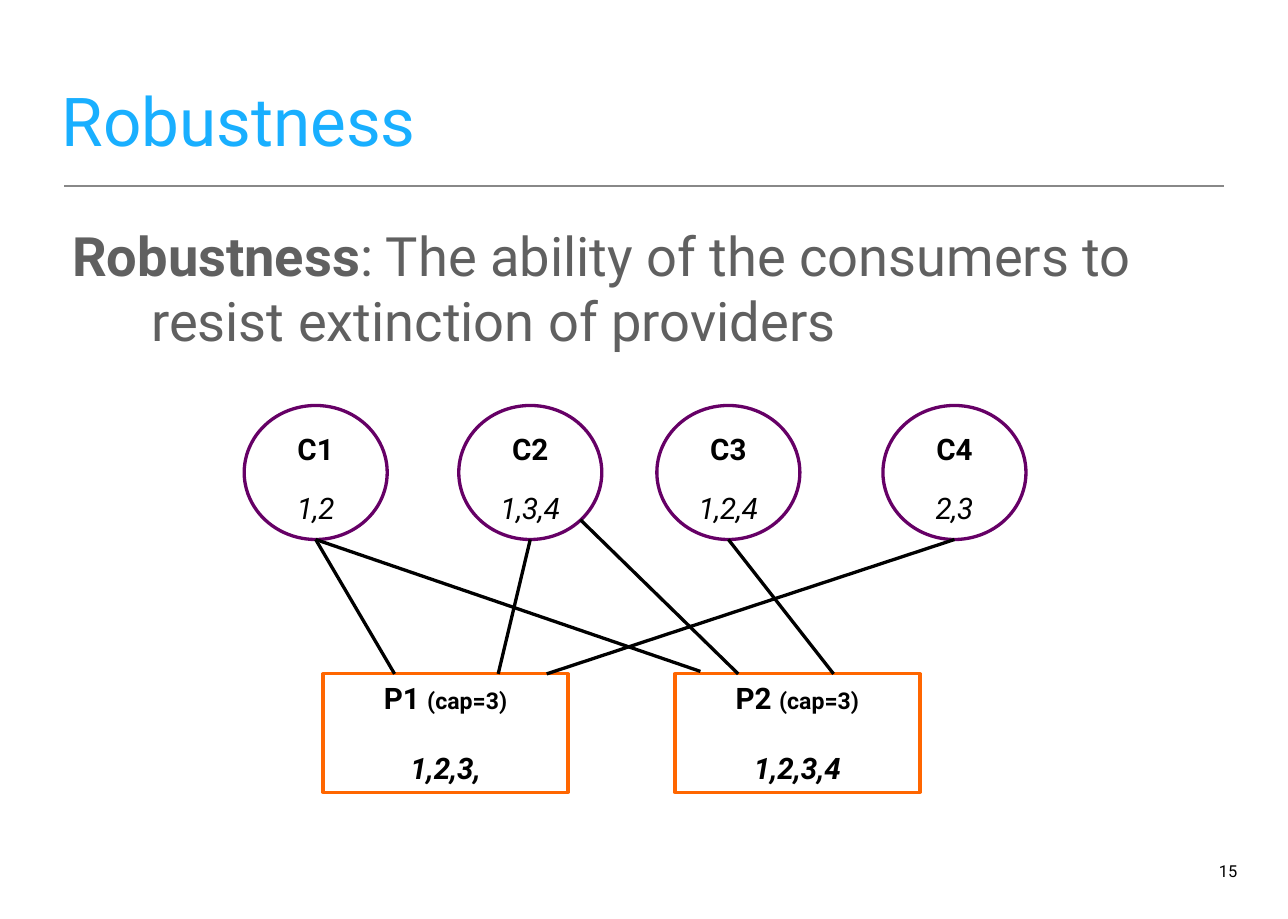
import pptx
import pptx.util
import pptx.dml.color
import pptx.enum.shapes
import pptx.enum.text
import pptx.oxml
import pptx.oxml.ns

Pt = pptx.util.Pt
ALIGN = pptx.enum.text.PP_ALIGN
ANCHOR = pptx.enum.text.MSO_ANCHOR
SHAPE = pptx.enum.shapes.MSO_SHAPE
STRAIGHT = pptx.enum.shapes.MSO_CONNECTOR.STRAIGHT

COLORS = {
    "title": "19AFFF",
    "body": "606060",
    "rule": "888888",
    "ink": "000000",
    "consumer": "660066",
    "provider": "FF6600",
}


def rgb(name):
    return pptx.dml.color.RGBColor.from_string(COLORS[name])


def add_run(paragraph, text, *, size=18, color="ink", bold=False, italic=False):
    run = paragraph.add_run()
    run.text = text
    run.font.name = "Roboto"
    run.font.size = Pt(size)
    run.font.bold = bold
    run.font.italic = italic
    run.font.color.rgb = rgb(color)


class SlideBuilder:
    def __init__(self, slide):
        self.slide = slide

    def text_box(self, box, *, anchor=ANCHOR.TOP, side=5, align=ALIGN.LEFT):
        """Add an empty text box and return its first paragraph."""
        frame = self.slide.shapes.add_textbox(*map(Pt, box)).text_frame
        frame.word_wrap = True
        frame.vertical_anchor = anchor
        frame.margin_left = frame.margin_right = Pt(side)
        frame.margin_top = frame.margin_bottom = Pt(3)
        frame.paragraphs[0].alignment = align
        return frame.paragraphs[0]

    def node(self, kind, box, color, gap):
        """Add an outlined shape and return its label and value paragraphs."""
        shape = self.slide.shapes.add_shape(kind, *map(Pt, box))
        shape.shadow.inherit = False
        shape.fill.background()
        shape.line.color.rgb = rgb(color)
        shape.line.width = Pt(2)
        frame = shape.text_frame
        frame.word_wrap = True
        frame.vertical_anchor = ANCHOR.TOP
        label, values = frame.paragraphs[0], frame.add_paragraph()
        label.alignment = values.alignment = ALIGN.CENTER
        values.space_before = Pt(gap)
        return label, values

    def consumer(self, center, name, values):
        box = (center - CIRCLE_WIDTH / 2, CIRCLE_TOP, CIRCLE_WIDTH, CIRCLE_HEIGHT)
        label, content = self.node(SHAPE.OVAL, box, "consumer", 14)
        add_run(label, name, bold=True)
        add_run(content, values, italic=True)

    def provider(self, left, name, values):
        box = (left, PROVIDER_TOP, 149, 72)
        label, content = self.node(SHAPE.RECTANGLE, box, "provider", 21)
        add_run(label, name + " ", bold=True)
        add_run(label, "(cap=3)", size=14, bold=True)
        add_run(content, values, bold=True, italic=True)

    def line(self, start, end, color="ink", width=2):
        connector = self.slide.shapes.add_connector(STRAIGHT, *map(Pt, start + end))
        connector.line.color.rgb = rgb(color)
        connector.line.width = Pt(width)
        properties = connector._element.spPr
        properties.append(pptx.oxml.parse_xml(
            "<a:effectLst %s/>" % pptx.oxml.ns.nsdecls("a")))


CIRCLE_TOP, CIRCLE_WIDTH, CIRCLE_HEIGHT = 246.5, 87, 81.5
CIRCLE_BOTTOM = CIRCLE_TOP + CIRCLE_HEIGHT
PROVIDER_TOP = 409.7
CONSUMERS = {
    "C1": (192, "1,2"),
    "C2": (322.5, "1,3,4"),
    "C3": (443, "1,2,4"),
    "C4": (580.5, "2,3"),
}
PROVIDERS = {"P1": (196.5, "1,2,3,"), "P2": (410.5, "1,2,3,4")}
# Consumer and the x where its link meets the provider
LINKS = [("C1", 240), ("C2", 303), ("C4", 332.5), ("C3", 507)]


def main():
    presentation = pptx.Presentation()
    presentation.slide_width = Pt(783.36)
    presentation.slide_height = Pt(558.72)
    builder = SlideBuilder(presentation.slides.add_slide(presentation.slide_layouts[6]))

    builder.line((39, 113), (744.5, 113), "rule", 1)
    title = builder.text_box((34.5, 20.5, 714, 80), anchor=ANCHOR.BOTTOM, side=3)
    add_run(title, "Robustness", size=41, color="title")

    definition = builder.text_box((39, 132, 705, 367))
    properties = definition._p.get_or_add_pPr()
    properties.set("marL", str(Pt(48)))
    properties.set("indent", str(Pt(-48)))
    add_run(definition, "Robustness", size=33, color="body", bold=True)
    add_run(definition, ": The ability of the consumers to resist extinction of providers",
            size=33, color="body")

    page = builder.text_box((734.5, 515, 23, 29.5), anchor=ANCHOR.MIDDLE, align=ALIGN.RIGHT)
    add_run(page, "15", size=10)

    for name, (left, values) in PROVIDERS.items():
        builder.provider(left, name, values)
    for name, (center, values) in CONSUMERS.items():
        builder.consumer(center, name, values)
    for name, end in LINKS:
        builder.line((CONSUMERS[name][0], CIRCLE_BOTTOM), (end, PROVIDER_TOP))
    builder.line((CONSUMERS["C1"][0], CIRCLE_BOTTOM), (426, 408.2))
    builder.line((353, 316), (449, PROVIDER_TOP))

    presentation.save("out.pptx")


if __name__ == "__main__":
    main()
